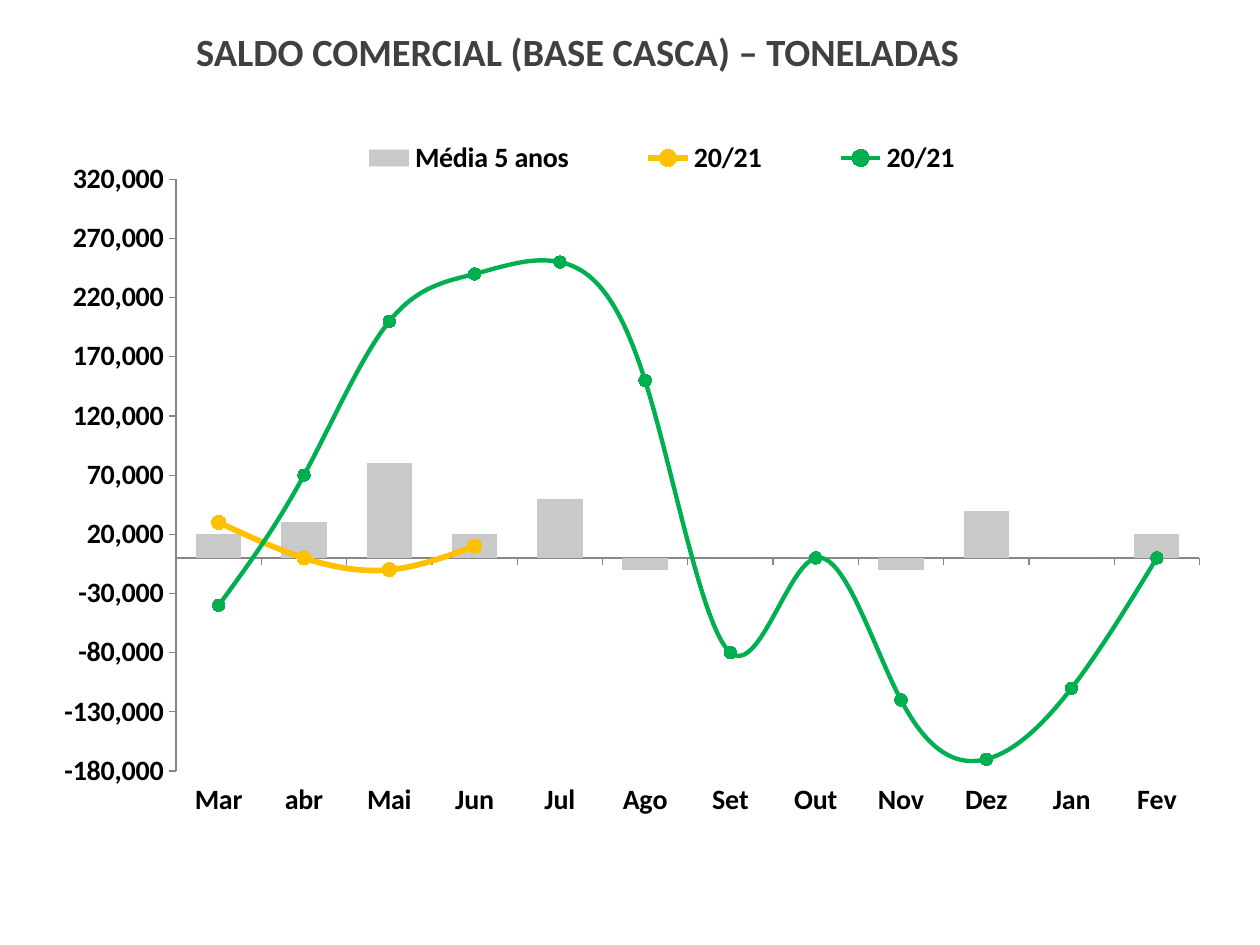
import pptx
import pptx.chart.data
import pptx.dml.color
import pptx.enum.chart
import pptx.enum.text
import pptx.oxml
import pptx.oxml.ns
import pptx.util

RGB = pptx.dml.color.RGBColor
GRAY, AMBER, GREEN = RGB(0xC9, 0xC9, 0xC9), RGB(0xFF, 0xC0, 0x00), RGB(0x00, 0xB0, 0x50)
TITLE_COLOR, AXIS_COLOR, BLACK = RGB(0x40, 0x40, 0x40), RGB(0x86, 0x86, 0x86), RGB(0, 0, 0)
FONT = "Calibri"

TITLE = "SALDO COMERCIAL (BASE CASCA) – TONELADAS"
MONTHS = ["Mar", "abr", "Mai", "Jun", "Jul", "Ago", "Set", "Out", "Nov", "Dez", "Jan", "Fev"]
AVERAGE = ("Média 5 anos", [20000, 30000, 80000, 20000, 50000, -10000,
                            0, 0, -10000, 40000, 0, 20000])
# name, values, colour, line width, marker size
LINES = [
    ("20/21", [30000, 0, -10000, 10000] + [None] * 8, AMBER, 3.25, 8),
    ("20/21", [-40000, 70000, 200000, 240000, 250000, 150000,
               -80000, 0, -120000, -170000, -110000, 0], GREEN, 2.5, 7),
]
TITLE_BOX = (0.63, 0.21, 7.91, 0.39)
CHART_BOX = (0.17, 0.79, 9.59, 6.03)
# x, y, width, height as shares of the chart
PLOT_AREA = (0.128, 0.105, 0.847, 0.779)
LEGEND_AREA = (0.23, 0.047, 0.6, 0.06)


def inches(box):
    return [pptx.util.Inches(v) for v in box]


def chart_xml(tag, body):
    return pptx.oxml.parse_xml(f"<c:{tag} {pptx.oxml.ns.nsdecls('c')}>{body}</c:{tag}>")


def set_layout(parent, index, area, inner=False):
    """Fix the place of a chart part; index is where c:layout belongs in it."""
    for old in parent.findall(pptx.oxml.ns.qn("c:layout")):
        parent.remove(old)
    body = '<c:layoutTarget val="inner"/>' if inner else ""
    body += '<c:xMode val="edge"/><c:yMode val="edge"/>'
    body += "".join(f'<c:{k} val="{v}"/>' for k, v in zip("xywh", area))
    parent.insert(index, chart_xml("layout", f"<c:manualLayout>{body}</c:manualLayout>"))


def move_to_line_plot(bar_chart, sers):
    axes = "".join(f'<c:axId val="{a.get("val")}"/>'
                   for a in bar_chart.findall(pptx.oxml.ns.qn("c:axId")))
    line_chart = chart_xml("lineChart", '<c:grouping val="standard"/><c:varyColors val="0"/>'
                           '<c:marker val="1"/>' + axes)
    for i, ser in enumerate(sers):
        for el in ser.findall(pptx.oxml.ns.qn("c:invertIfNegative")):
            ser.remove(el)
        line_chart.insert(2 + i, ser)
    bar_chart.addnext(line_chart)


def add_title(slide):
    s = slide.shapes.title
    s.left, s.top, s.width, s.height = inches(TITLE_BOX)
    tf = s.text_frame
    tf.text = TITLE
    tf.word_wrap = False
    tf.auto_size = pptx.enum.text.MSO_AUTO_SIZE.NONE
    tf.vertical_anchor = pptx.enum.text.MSO_ANCHOR.MIDDLE
    p = tf.paragraphs[0]
    p.alignment = pptx.enum.text.PP_ALIGN.CENTER
    font = p.runs[0].font
    font.name, font.size, font.bold = FONT, pptx.util.Pt(22), True
    font.color.rgb = TITLE_COLOR


def style_axes(chart):
    for axis in (chart.category_axis, chart.value_axis):
        axis.has_major_gridlines = False
        axis.major_tick_mark = pptx.enum.chart.XL_TICK_MARK.OUTSIDE
        axis.minor_tick_mark = pptx.enum.chart.XL_TICK_MARK.NONE
        axis.format.line.color.rgb = AXIS_COLOR
    chart.category_axis.tick_label_position = pptx.enum.chart.XL_TICK_LABEL_POSITION.LOW
    axis = chart.value_axis
    axis.minimum_scale, axis.maximum_scale, axis.major_unit = -180000, 320000, 50000
    axis.tick_labels.number_format = "#,#00"
    axis.tick_labels.number_format_is_linked = False


def add_balance_chart(slide):
    data = pptx.chart.data.CategoryChartData()
    data.categories = MONTHS
    for name, values, *_ in [AVERAGE] + LINES:
        data.add_series(name, values)
    chart = slide.shapes.add_chart(pptx.enum.chart.XL_CHART_TYPE.COLUMN_CLUSTERED,
                                   *inches(CHART_BOX), data).chart
    font = chart.font
    font.name, font.size, font.bold = FONT, pptx.util.Pt(16), True
    font.color.rgb = BLACK
    chart.has_title = False
    style_axes(chart)

    bars = chart.plots[0]
    bars.gap_width, bars.vary_by_categories = 88, False
    fill = bars.series[0].format.fill
    fill.solid()
    fill.fore_color.rgb = GRAY
    bars.series[0].invert_if_negative = False

    bar_chart = bars.series[0]._element.getparent()
    move_to_line_plot(bar_chart, [s._element for s in list(bars.series)[1:]])
    for series, (_, _, color, width, size) in zip(chart.plots[1].series, LINES):
        series.smooth = True
        series.format.line.color.rgb = color
        series.format.line.width = pptx.util.Pt(width)
        marker = series.marker
        marker.style, marker.size = pptx.enum.chart.XL_MARKER_STYLE.CIRCLE, size
        marker.format.fill.solid()
        marker.format.fill.fore_color.rgb = color
        marker.format.line.color.rgb = color

    chart.has_legend = True
    legend = chart.legend
    legend.position = pptx.enum.chart.XL_LEGEND_POSITION.RIGHT
    legend.include_in_layout = False
    set_layout(legend._element, 1, LEGEND_AREA)
    set_layout(bar_chart.getparent(), 0, PLOT_AREA, inner=True)


def main():
    prs = pptx.Presentation()
    prs.slide_width, prs.slide_height = inches((10, 7.5))
    slide = prs.slides.add_slide(prs.slide_layouts[5])
    add_title(slide)
    add_balance_chart(slide)
    prs.save("out.pptx")


if __name__ == "__main__":
    main()
